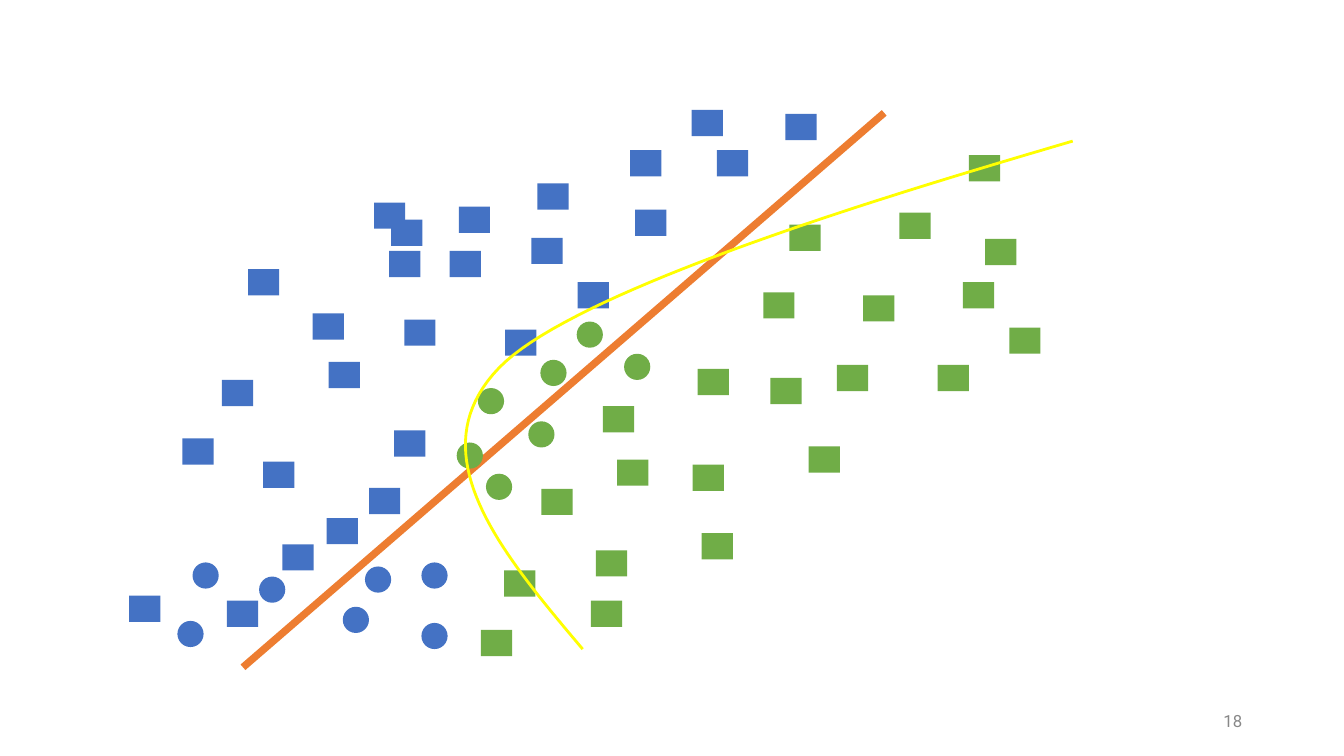
from lxml import etree
from pptx import Presentation
from pptx.dml.color import RGBColor
from pptx.enum.shapes import MSO_CONNECTOR, MSO_SHAPE
from pptx.enum.text import MSO_ANCHOR, PP_ALIGN
from pptx.oxml.ns import qn
from pptx.util import Inches, Pt

RECTANGLE = MSO_SHAPE.RECTANGLE
OVAL = MSO_SHAPE.OVAL
STRAIGHT = MSO_CONNECTOR.STRAIGHT
MIDDLE = MSO_ANCHOR.MIDDLE
RIGHT = PP_ALIGN.RIGHT

BLUE = RGBColor(0x44, 0x72, 0xC4)
GREEN = RGBColor(0x70, 0xAD, 0x47)
ORANGE = RGBColor(0xED, 0x7D, 0x31)
YELLOW = RGBColor(0xFF, 0xFF, 0x00)
GREY = RGBColor(0x88, 0x88, 0x88)

SQUARE_WIDTH = 0.31
MARKER_HEIGHT = 0.26
CURVE_STEPS = 40

# Left and top of every marker, in inches
BLUE_SQUARES = [
    (3.71, 2.01), (4.55, 2.05), (3.86, 2.49), (4.46, 2.49), (5.27, 2.36),
    (3.1, 3.11), (4.01, 3.17), (3.26, 3.59), (2.46, 2.67), (5.01, 3.27),
    (5.33, 1.82), (6.3, 2.08), (5.73, 2.8), (2.2, 3.77), (7.11, 1.49),
    (3.91, 4.27), (2.61, 4.58), (3.66, 4.84), (2.25, 5.96), (6.25, 1.49),
    (2.8, 5.4), (3.24, 5.14), (7.79, 1.13), (1.28, 5.91), (6.86, 1.09),
    (1.81, 4.35), (3.88, 2.18),
]
GREEN_SQUARES = [
    (7.57, 2.9), (7.83, 2.23), (7.64, 3.75), (8.56, 2.93), (9.55, 2.8),
    (6.92, 3.66), (8.3, 3.62), (5.91, 5.46), (5.98, 4.03), (9.3, 3.62),
    (8.92, 2.11), (9.77, 2.37), (10.01, 3.25), (5, 5.66), (8.02, 4.43),
    (6.87, 4.61), (5.37, 4.85), (6.12, 4.56), (5.86, 5.96), (9.61, 1.54),
    (6.96, 5.29), (4.77, 6.25),
]
BLUE_CIRCLES = [
    (4.18, 5.58), (3.4, 6.02), (3.62, 5.62), (4.18, 6.18), (2.57, 5.72),
    (1.91, 5.58), (1.76, 6.16),
]
GREEN_CIRCLES = [
    (6.19, 3.51), (5.36, 3.57), (5.24, 4.18), (4.82, 4.7), (4.53, 4.39),
    (4.74, 3.85), (5.72, 3.19),
]
# Each Bezier segment: start, two control points, end
CURVE_SEGMENTS = [
    [(5.78, 6.44), (4.96, 5.47), (4.14, 4.49), (4.95, 3.65)],
    [(4.95, 3.65), (5.76, 2.81), (9.36, 1.78), (10.64, 1.4)],
]


def add_markers(page, kind, width, color, positions):
    for left, top in positions:
        marker = page.shapes.add_shape(
            kind, Inches(left), Inches(top), Inches(width), Inches(MARKER_HEIGHT))
        marker.shadow.inherit = False
        marker.fill.solid()
        marker.fill.fore_color.rgb = color
        marker.line.fill.background()


def bezier_point(segment, t):
    weights = ((1 - t) ** 3, 3 * t * (1 - t) ** 2, 3 * t ** 2 * (1 - t), t ** 3)
    return tuple(
        Inches(sum(weight * point[axis] for weight, point in zip(weights, segment)))
        for axis in (0, 1))


deck = Presentation()
deck.slide_width = Inches(13.33)
deck.slide_height = Inches(7.5)
page = deck.slides.add_slide(deck.slide_layouts[6])

# Page number
number_box = page.shapes.add_textbox(Inches(9.42), Inches(6.95), Inches(3), Inches(0.4))
frame = number_box.text_frame
frame.word_wrap = True
frame.vertical_anchor = MIDDLE
para = frame.paragraphs[0]
para.alignment = RIGHT
span = para.add_run()
span.text = "18"
span.font.name = "Roboto"
span.font.size = Pt(12)
span.font.color.rgb = GREY

# Square markers
add_markers(page, RECTANGLE, SQUARE_WIDTH, BLUE, BLUE_SQUARES)
add_markers(page, RECTANGLE, SQUARE_WIDTH, GREEN, GREEN_SQUARES)

# Straight boundary
boundary = page.shapes.add_connector(
    STRAIGHT, Inches(2.41), Inches(6.62), Inches(8.77), Inches(1.12))
boundary.line.color.rgb = ORANGE
boundary.line.width = Pt(5.25)
etree.SubElement(boundary._element.spPr, qn("a:effectLst"))

# Round markers
add_markers(page, OVAL, MARKER_HEIGHT, BLUE, BLUE_CIRCLES)
add_markers(page, OVAL, MARKER_HEIGHT, GREEN, GREEN_CIRCLES)

# Curved boundary
points = [bezier_point(segment, step / CURVE_STEPS)
          for segment in CURVE_SEGMENTS for step in range(1, CURVE_STEPS + 1)]
start_x, start_y = bezier_point(CURVE_SEGMENTS[0], 0)
builder = page.shapes.build_freeform(start_x, start_y)
builder.add_line_segments(points, close=False)
curve = builder.convert_to_shape()
curve.shadow.inherit = False
curve.fill.background()
curve.line.color.rgb = YELLOW
curve.line.width = Pt(2)

deck.save("out.pptx")
